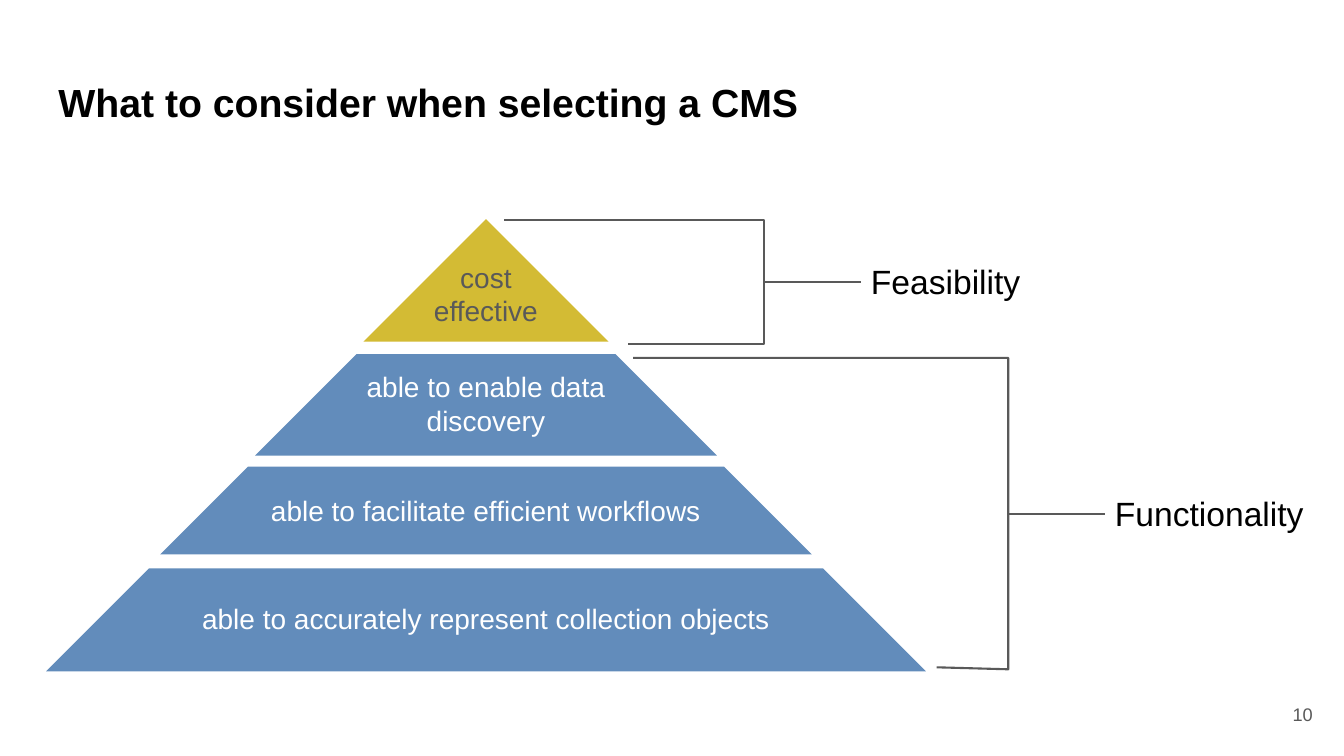
from lxml import etree
from pptx import Presentation
from pptx import util as u
from pptx.dml.color import RGBColor
from pptx.enum import shapes, text
from pptx.oxml.ns import qn

WIDTH, HEIGHT = 13.33, 7.5
FONT, BLACK, GREY, WHITE, BLUE, GOLD = "Arial", "000000", "595959", "FFFFFF", "628CBB", "D3BB34"
TITLE = "What to consider when selecting a CMS"
PAGE_NUMBER = "10"

AXIS = 4.82  # horizontal centre of the pyramid
STRIPE, PEAK = shapes.MSO_SHAPE.DIAGONAL_STRIPE, shapes.MSO_SHAPE.RIGHT_TRIANGLE
# preset, rotation, side, base line, stripe adjustment, fill
LEVELS = [
    (STRIPE, 45, 3.24, 4.52, 0.561, BLUE),
    (STRIPE, 45, 4.57, 5.5, 0.731, BLUE),
    (STRIPE, 45, 6.17, 6.66, 0.766, BLUE),
    (PEAK, 135, 1.72, 3.39, None, GOLD),
]
# lines, top, width, height, colour
LEVEL_TEXTS = [
    (["cost", "effective"], 2.48, 1.58, 0.88, GREY),
    (["able to enable data discovery"], 3.57, 3.26, 0.88, WHITE),
    (["able to facilitate efficient workflows"], 4.8, 5, 0.54, WHITE),
    (["able to accurately represent collection objects"], 5.87, 6.33, 0.54, WHITE),
]
# label, bracket spine, upper start and lower end of the bracket
BRACKETS = [
    ("Feasibility", 7.58, (5, 2.18), (6.23, 3.41), 3.41),
    ("Functionality", 10, (6.28, 3.55), (9.29, 6.62), 6.64),
]
STEM, LABEL_WIDTH, LABEL_HEIGHT = 0.96, 2.37, 0.61


def color(value):
    return RGBColor.from_string(value)


def inches(*lengths):
    return [u.Inches(length) for length in lengths]


def add_text(parent, lines, box, size, fill, inset=0.1, align=text.PP_ALIGN.LEFT,
             anchor=text.MSO_ANCHOR.TOP, bold=False):
    shape = parent.add_textbox(*inches(*box))
    frame = shape.text_frame
    frame.word_wrap = True
    frame.vertical_anchor = anchor
    frame.margin_left = frame.margin_right = u.Inches(inset)
    frame.margin_top = frame.margin_bottom = u.Inches(inset)
    paragraph = frame.paragraphs[0]
    paragraph.alignment = align
    for index, line in enumerate(lines):
        if index:
            paragraph.add_line_break()
        run = paragraph.add_run()
        run.text = line
        run.font.name, run.font.size, run.font.bold = FONT, u.Pt(size), bold
        run.font.color.rgb = color(fill)
    return shape


def add_level(parent, preset, rotation, side, base, adjustment, fill):
    """Turn a square preset so that its diagonal becomes the level's base line."""
    shape = parent.add_shape(preset, *inches(AXIS - side / 2, base - side / 2, side, side))
    shape.rotation = rotation
    if adjustment is not None:
        shape.adjustments[0] = adjustment
    shape.shadow.inherit = False
    shape.fill.solid()
    shape.fill.fore_color.rgb = color(fill)
    shape.line.fill.background()


def style_line(shape):
    shape.line.color.rgb = color(GREY)
    shape.line.width = u.Pt(1.5)


def add_bracket(parent, label, spine, start, end, bottom):
    builder = parent.build_freeform(*inches(*start), scale=1.0)
    corners = [(spine, start[1]), (spine, bottom), end]
    builder.add_line_segments([inches(*corner) for corner in corners], close=False)
    bracket = builder.convert_to_shape()
    bracket.shadow.inherit = False
    bracket.fill.background()
    style_line(bracket)

    middle = (start[1] + bottom) / 2
    box = (spine + STEM, middle - LABEL_HEIGHT / 2, LABEL_WIDTH, LABEL_HEIGHT)
    label_box = add_text(parent, [label], box, 24, BLACK)
    stem = parent.add_connector(shapes.MSO_CONNECTOR.STRAIGHT,
                                *inches(spine, middle, spine + STEM, middle))
    stem.end_connect(label_box, 1)
    style_line(stem)
    etree.SubElement(stem._element.spPr, qn("a:effectLst"))


def main():
    presentation = Presentation()
    presentation.slide_width, presentation.slide_height = inches(WIDTH, HEIGHT)
    slide = presentation.slides.add_slide(presentation.slide_layouts[6])
    add_text(slide.shapes, [TITLE], (0.45, 0.65, 12.42, 0.83), 28, BLACK, 0.13, bold=True)
    add_text(slide.shapes, [PAGE_NUMBER], (12.35, 6.8, 0.8, 0.57), 13, GREY, 0.13,
             text.PP_ALIGN.RIGHT, text.MSO_ANCHOR.MIDDLE)

    pyramid = slide.shapes.add_group_shape().shapes
    for level in LEVELS:
        add_level(pyramid, *level)
    for lines, top, width, height, fill in LEVEL_TEXTS:
        add_text(pyramid, lines, (AXIS - width / 2, top, width, height), 20, fill,
                 align=text.PP_ALIGN.CENTER)
    for bracket in BRACKETS:
        add_bracket(slide.shapes, *bracket)
    presentation.save("out.pptx")


if __name__ == "__main__":
    main()
